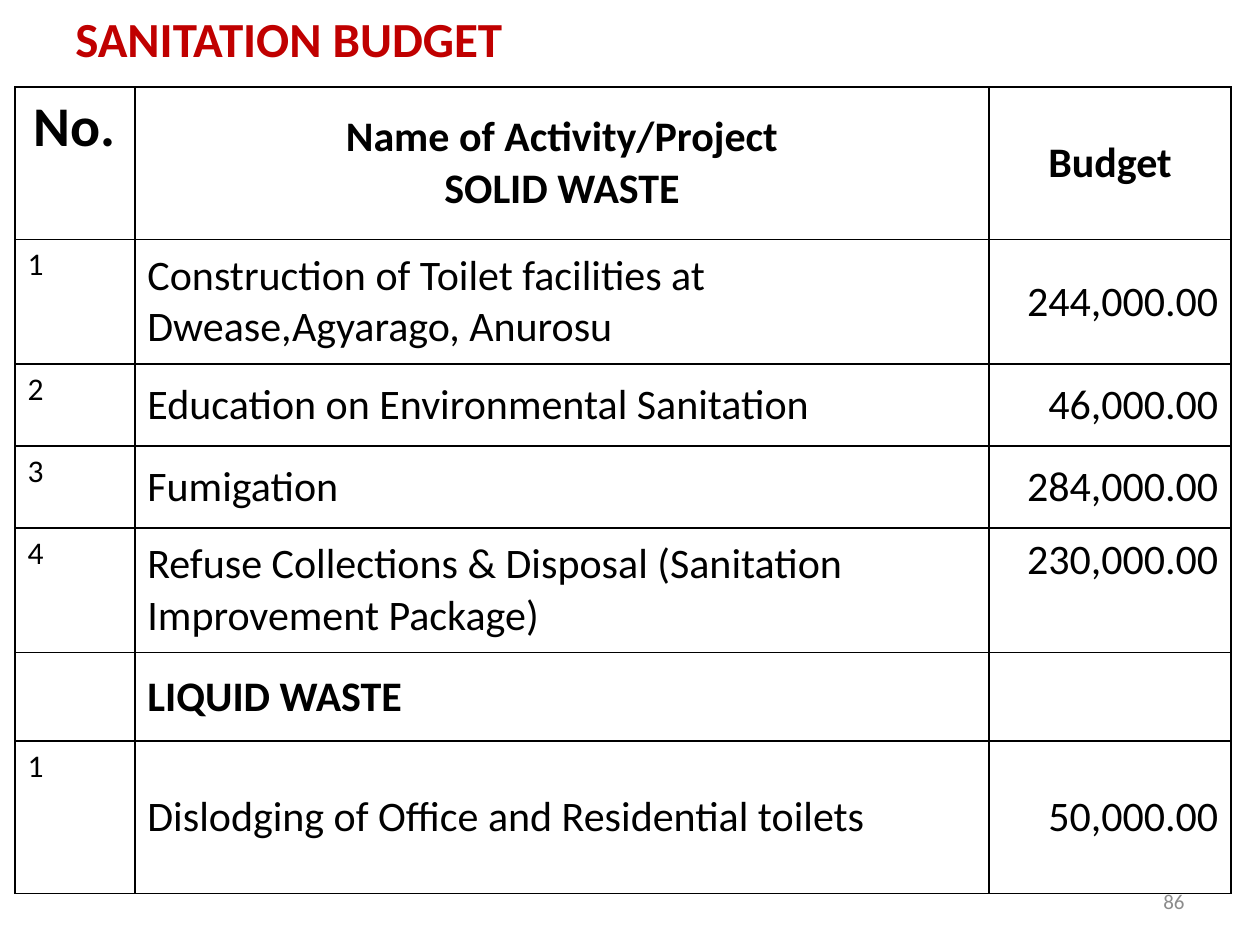
from lxml.etree import SubElement
from pptx import Presentation
from pptx.dml.color import RGBColor
from pptx.enum.text import MSO_ANCHOR, PP_ALIGN
from pptx.oxml.ns import qn
from pptx.util import Inches, Pt

COLORS = {"title": "C00000", "ink": "000000", "number": "8C8C8C"}
FONT = "Calibri"
WIDTH, HEIGHT = 10, 7.5
COLUMN_WIDTHS = [0.95, 6.78, 1.92]
ROW_HEIGHTS = [1.21, 0.99, 0.65, 0.65, 0.99, 0.7, 1.21]
HEADER = ["No.", "Name of Activity/Project\nSOLID WASTE", "Budget"]
ACTIVITIES = [
    ["1", "Construction of Toilet facilities at Dwease,Agyarago, Anurosu", "244,000.00"],
    ["2", "Education on Environmental Sanitation", "46,000.00"],
    ["3", "Fumigation", "284,000.00"],
    ["4", "Refuse Collections & Disposal (Sanitation Improvement Package)", "230,000.00"],
    ["", "LIQUID WASTE", ""],
    ["1", "Dislodging of Office and Residential toilets", "50,000.00"],
]
SECTION_ROW = 5
TOP_BUDGET_ROW = 4


def write(frame, text, size=24, color="ink", bold=False, align=PP_ALIGN.LEFT):
    """Fill a text frame, one paragraph for each line of text."""
    frame.word_wrap = True
    for index, line in enumerate(text.split("\n")):
        para = frame.add_paragraph() if index else frame.paragraphs[0]
        para.alignment = align
        if not line:
            continue
        span = para.add_run()
        span.text = line
        span.font.name = FONT
        span.font.size = Pt(size)
        span.font.bold = bold
        span.font.color.rgb = RGBColor.from_string(COLORS[color])


def add_text(page, place, text, **style):
    box = page.shapes.add_textbox(*map(Inches, place))
    box.text_frame.vertical_anchor = MSO_ANCHOR.MIDDLE
    write(box.text_frame, text, **style)


def draw_borders(cell):
    properties = cell._tc.get_or_add_tcPr()
    for index, side in enumerate(("lnL", "lnR", "lnT", "lnB")):
        line = SubElement(properties, qn(f"a:{side}"), w=str(Pt(1)))
        fill = SubElement(line, qn("a:solidFill"))
        SubElement(fill, qn("a:srgbClr"), val=COLORS["ink"])
        properties.insert(index, line)  # borders come before the cell fill


def cell_style(row, column):
    if row == 0:
        return {"size": 32 if column == 0 else 24, "bold": True, "align": PP_ALIGN.CENTER}
    return {
        "size": 18 if column == 0 else 24,
        "bold": row == SECTION_ROW,
        "align": PP_ALIGN.RIGHT if column == 2 else PP_ALIGN.LEFT,
    }


def add_budget_table(page, left, top):
    rows = [HEADER] + ACTIVITIES
    frame = page.shapes.add_table(
        len(rows), len(HEADER), Inches(left), Inches(top),
        Inches(sum(COLUMN_WIDTHS)), Inches(sum(ROW_HEIGHTS)))
    table = frame.table
    table.first_row = table.horz_banding = False
    for column, width in zip(table.columns, COLUMN_WIDTHS):
        column.width = Inches(width)
    for row, height in zip(table.rows, ROW_HEIGHTS):
        row.height = Inches(height)
    for r, texts in enumerate(rows):
        for c, text in enumerate(texts):
            cell = table.cell(r, c)
            at_top = c == 0 or (r, c) == (TOP_BUDGET_ROW, 2)
            cell.vertical_anchor = MSO_ANCHOR.TOP if at_top else MSO_ANCHOR.MIDDLE
            cell.fill.background()
            draw_borders(cell)
            write(cell.text_frame, text, **cell_style(r, c))


def main():
    deck = Presentation()
    deck.slide_width, deck.slide_height = Inches(WIDTH), Inches(HEIGHT)
    page = deck.slides.add_slide(deck.slide_layouts[6])
    margin = 0.05 * WIDTH
    add_text(page, (margin, 0.01, WIDTH - 2 * margin, 0.58), "SANITATION BUDGET",
             size=28, color="title", bold=True)
    add_budget_table(page, 0.12, 0.69)
    number_width = WIDTH * 0.23
    add_text(page, (WIDTH - margin - number_width, 6.95, number_width, 0.4), "86",
             size=12, color="number", align=PP_ALIGN.RIGHT)
    deck.save("out.pptx")


if __name__ == "__main__":
    main()
